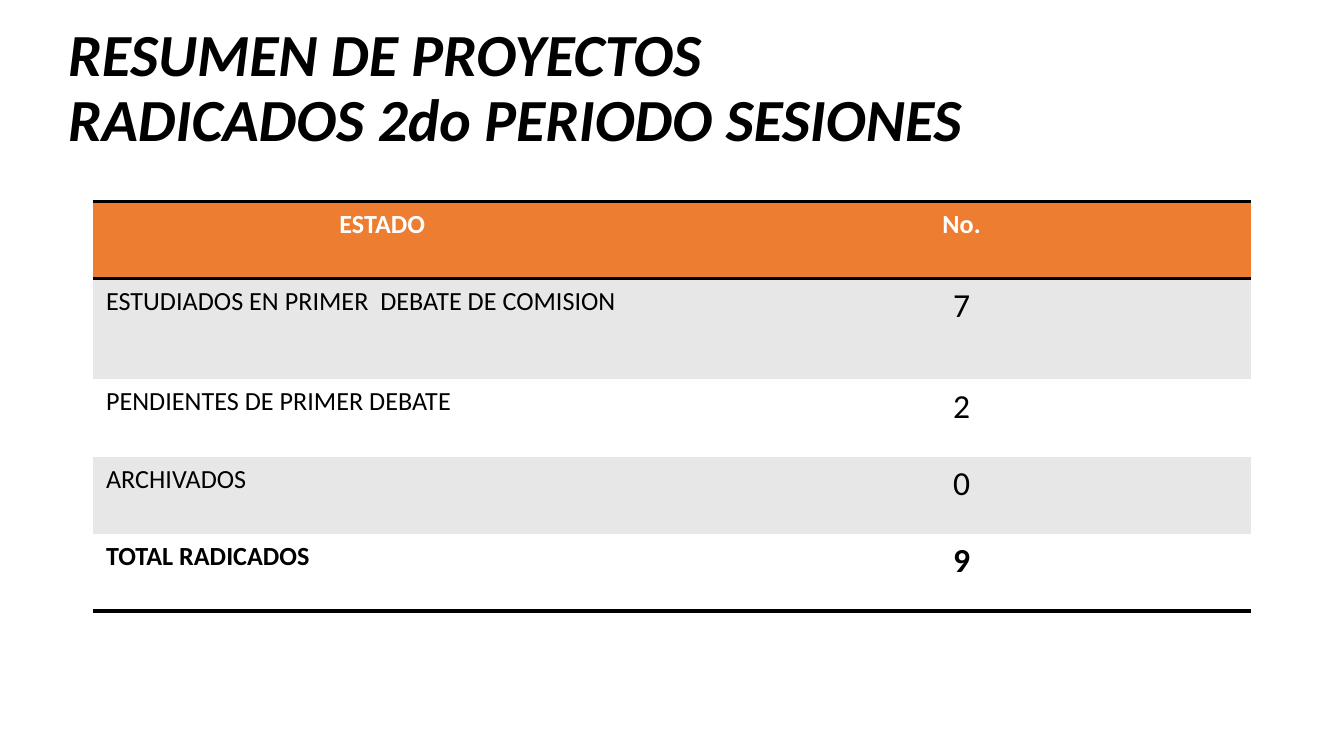
from dataclasses import dataclass

from lxml.etree import SubElement
from pptx import Presentation
from pptx.dml.color import RGBColor
from pptx.enum.text import MSO_ANCHOR, PP_ALIGN
from pptx.oxml.ns import qn
from pptx.util import Cm, Pt


@dataclass(frozen=True)
class Theme:
    font: str = "Calibri"
    ink: str = "000000"
    white: str = "FFFFFF"
    accent: str = "ED7D31"
    band: str = "E7E7E7"
    title_size: int = 32
    label_size: int = 14
    number_size: int = 18
    rule_width: int = 2


THEME = Theme()
PLAIN_TABLE_STYLE = "{2D5ABB26-0587-4C30-8999-92F81FD0307C}"
HEADER = ("ESTADO", "No.")
PROJECTS = [
    ("ESTUDIADOS EN PRIMER  DEBATE DE COMISION", "7"),
    ("PENDIENTES DE PRIMER DEBATE", "2"),
    ("ARCHIVADOS", "0"),
    ("TOTAL RADICADOS", "9"),
]
ROW_HEIGHTS = (1.46, 1.9, 1.46, 1.46, 1.46)


def write(para, text, color, **formats):
    span = para.add_run()
    span.text = text
    for name, value in {"name": THEME.font, **formats}.items():
        setattr(span.font, name, value)
    span.font.color.rgb = RGBColor.from_string(color)


def rule(cell, side):
    line = SubElement(cell._tc.get_or_add_tcPr(), qn(f"a:ln{side}"), w=str(Pt(THEME.rule_width)))
    fill = SubElement(line, qn("a:solidFill"))
    SubElement(fill, qn("a:srgbClr"), val=THEME.ink)


def add_title(page, left, top, width, height):
    box = page.shapes.add_textbox(Cm(left), Cm(top), Cm(width), Cm(height))
    frame = box.text_frame
    for name, value in {"word_wrap": True, "vertical_anchor": MSO_ANCHOR.MIDDLE}.items():
        setattr(frame, name, value)
    para = frame.paragraphs[0]
    para.line_spacing = 0.9
    write(para, "RESUMEN DE PROYECTOS RADICADOS 2do PERIODO SESIONES", THEME.ink,
          size=Pt(THEME.title_size), bold=True, italic=True)


def add_summary(page, left, top, width):
    rows = [HEADER, *PROJECTS]
    last = len(rows) - 1
    table = page.shapes.add_table(len(rows), len(HEADER), Cm(left), Cm(top),
                                  Cm(width), Cm(sum(ROW_HEIGHTS))).table
    table._tbl.tblPr.find(qn("a:tableStyleId")).text = PLAIN_TABLE_STYLE
    for row, height in zip(table.rows, ROW_HEIGHTS):
        row.height = Cm(height)
    for index, values in enumerate(rows):
        is_header = index == 0
        fill = THEME.accent if is_header else THEME.band if index % 2 else THEME.white
        sides = "TB" if is_header else "B" if index == last else ""
        for column, text in enumerate(values):
            cell = table.cell(index, column)
            for side in sides:
                rule(cell, side)
            cell.fill.solid()
            cell.fill.fore_color.rgb = RGBColor.from_string(fill)
            para = cell.text_frame.paragraphs[0]
            para.alignment = PP_ALIGN.CENTER if is_header or column else PP_ALIGN.LEFT
            size = THEME.number_size if column and not is_header else THEME.label_size
            write(para, text, THEME.white if is_header else THEME.ink,
                  size=Pt(size), bold=index in (0, last))


def main():
    deck = Presentation()
    deck.slide_width, deck.slide_height = Cm(25.4), Cm(14.29)
    page = deck.slides.add_slide(deck.slide_layouts[6])
    add_title(page, 1.04, 0.03, 18.24, 3.33)
    add_summary(page, 1.75, 3.81, 21.9)
    deck.save("out.pptx")


if __name__ == "__main__":
    main()
